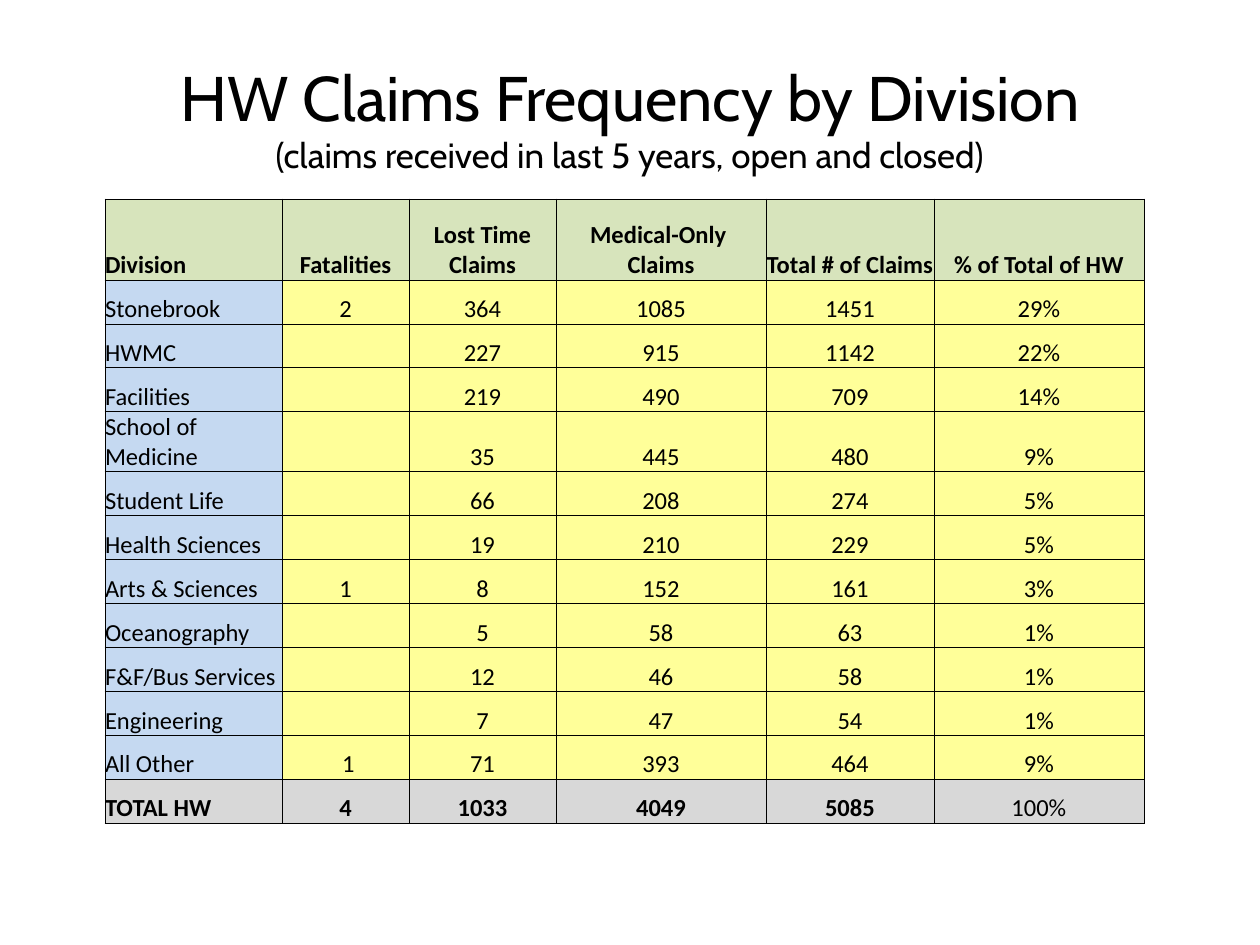
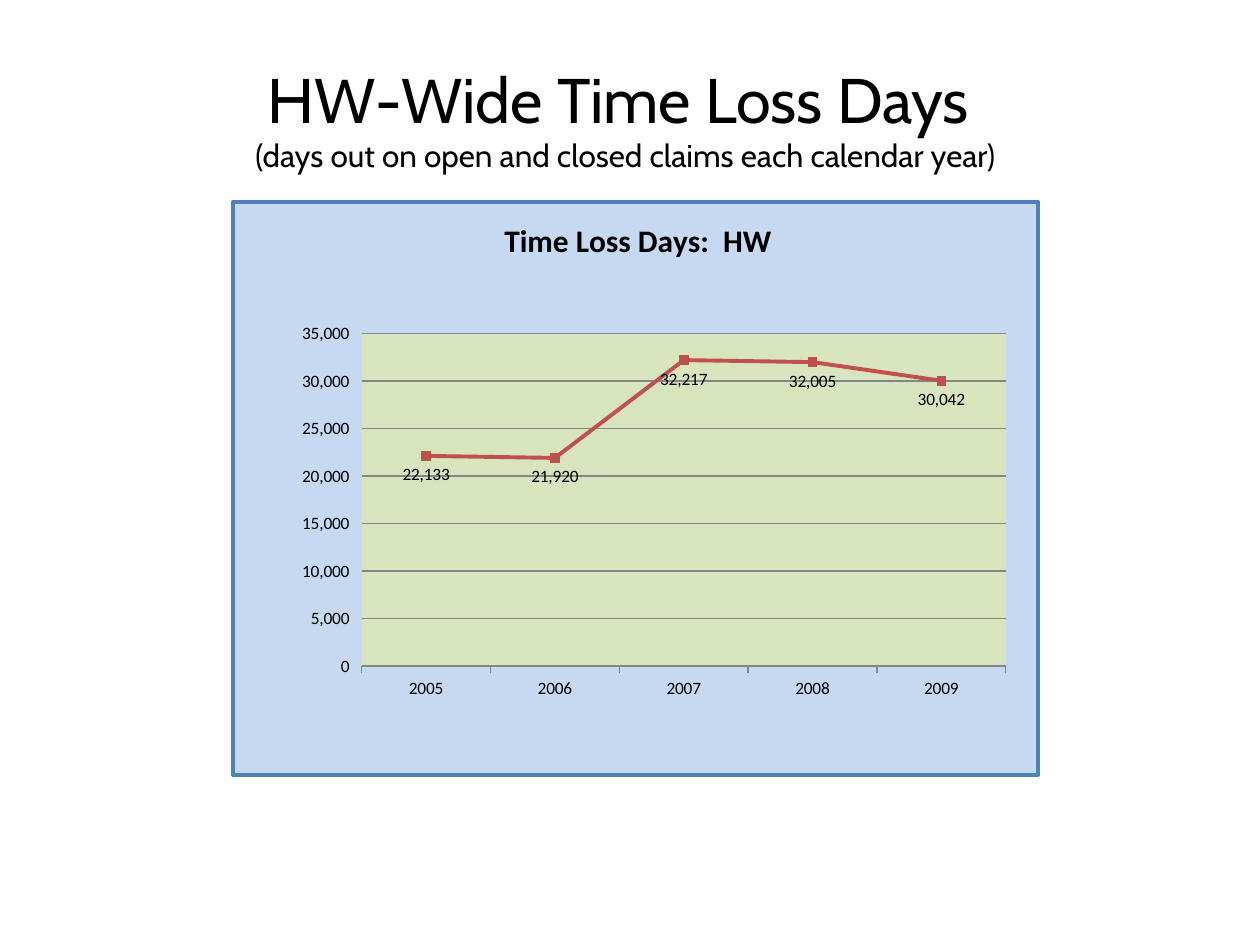
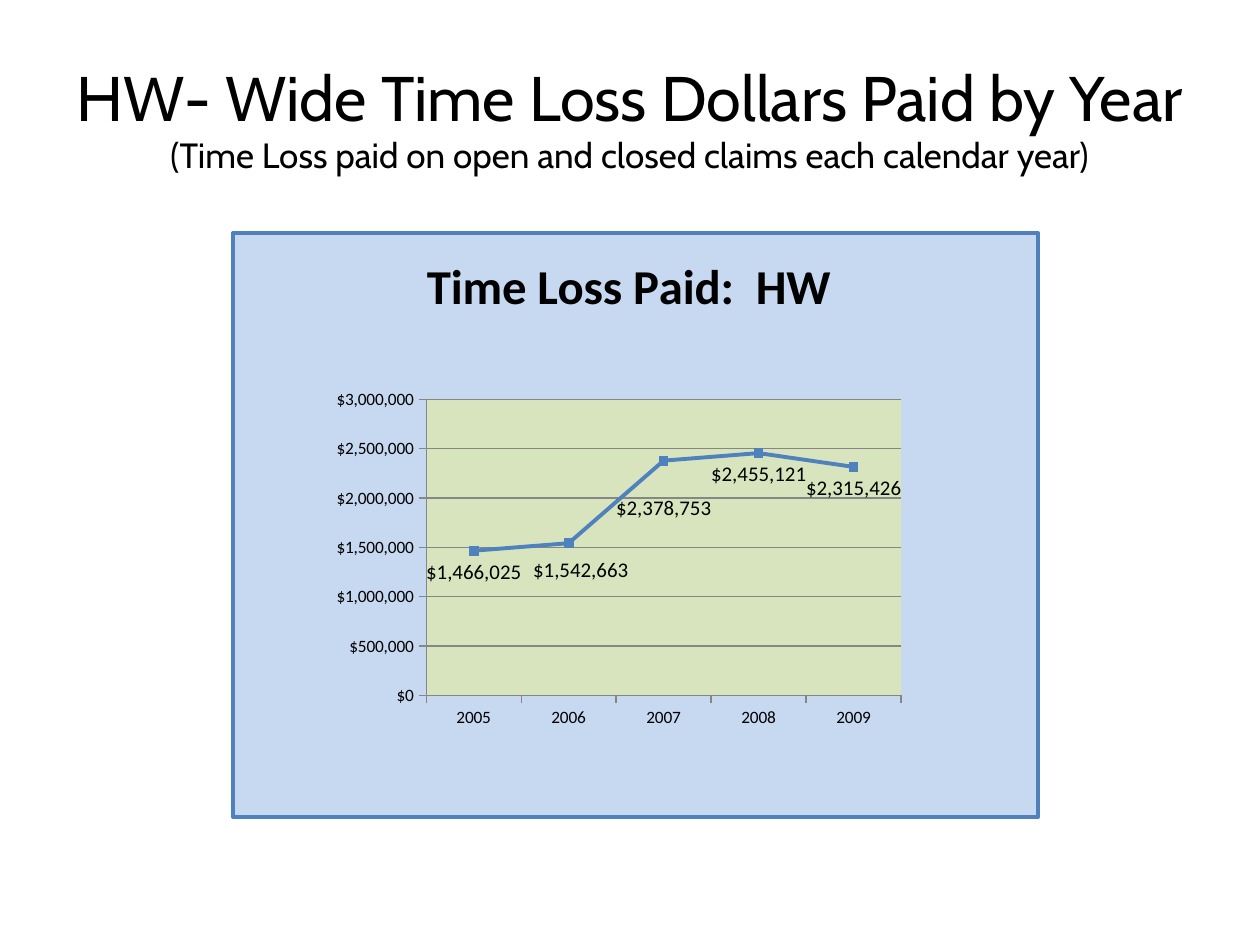
import pptx
import pptx.chart.data
import pptx.dml.color
import pptx.enum.chart
import pptx.enum.text
import pptx.oxml
import pptx.oxml.ns
import pptx.util
import lxml.etree


class Theme:
    black = "000000"
    green = "D7E4BC"
    blue = "C5D9F1"
    yellow = "FFFF99"
    grey = "D8D8D8"
    chart_fill = "C6D9F1"
    plot_fill = "D7E4BD"
    border = "4F81BD"
    axis = "868686"
    red_line = "C0504D"
    blue_line = "4F81BD"
    title_font = "Cabin"
    body_font = "Calibri"
    title_size = 36
    table_size = 14
    axis_size = 10


PX = 914400 / 126
qn = pptx.oxml.ns.qn
rgb = pptx.dml.color.RGBColor.from_string
Pt = pptx.util.Pt


def px(*lengths):
    return [pptx.util.Emu(round(length * PX)) for length in lengths]


def set_layout(parent, index, target=None, mode=None, **fractions):
    for old_layout in parent.findall(qn("c:layout")):
        parent.remove(old_layout)
    layout = lxml.etree.Element(qn("c:layout"))
    manual = lxml.etree.SubElement(layout, qn("c:manualLayout"))
    settings = {"layoutTarget": target, "xMode": mode, "yMode": mode, **fractions}
    for name, value in settings.items():
        if value is not None:
            lxml.etree.SubElement(manual, qn("c:" + name)).set("val", str(value))
    parent.insert(index, layout)


presentation = pptx.Presentation()
presentation.slide_width, presentation.slide_height = px(1260, 945)

titles = [
    ("HW Claims Frequency by Division", "(claims received in last 5 years, open and closed)", 20, 63, 1134),
    ("HW-Wide Time Loss Days ", "(days out on open and closed claims each calendar year)", 18, 32, 1187),
    ("HW- Wide Time Loss Dollars Paid by Year", "(Time Loss paid on open and closed claims each calendar year)", 20, 63, 1134),
]
slides = []
for heading, subtitle, subtitle_size, left, width in titles:
    slide = presentation.slides.add_slide(presentation.slide_layouts[6])
    slides.append(slide)
    text_frame = slide.shapes.add_textbox(*px(left, 38, width, 158)).text_frame
    text_frame.word_wrap = True
    text_frame.vertical_anchor = pptx.enum.text.MSO_ANCHOR.MIDDLE
    paragraph = text_frame.paragraphs[0]
    paragraph.alignment = pptx.enum.text.PP_ALIGN.CENTER
    for text, size in ((heading, Theme.title_size), (subtitle, subtitle_size)):
        if text == subtitle:
            paragraph.add_line_break()
        run = paragraph.add_run()
        run.text = text
        run.font.size = Pt(size)
        run.font.name = Theme.title_font
        run.font.color.rgb = rgb(Theme.black)

claims = [
    ("Division", "Fatalities", "Lost Time Claims", "Medical-Only  Claims", "Total # of Claims", "% of Total of HW"),
    ("Stonebrook", "2", "364", "1085", "1451", "29%"),
    ("HWMC", "", "227", "915", "1142", "22%"),
    ("Facilities", "", "219", "490", "709", "14%"),
    ("School of Medicine", "", "35", "445", "480", "9%"),
    ("Student Life", "", "66", "208", "274", "5%"),
    ("Health Sciences", "", "19", "210", "229", "5%"),
    ("Arts & Sciences", "1", "8", "152", "161", "3%"),
    ("Oceanography", "", "5", "58", "63", "1%"),
    ("F&F/Bus Services", "", "12", "46", "58", "1%"),
    ("Engineering", "", "7", "47", "54", "1%"),
    ("All Other", chr(160) + "1", "71", "393", "464", "9%"),
    ("TOTAL HW", "4", "1033", "4049", "5085", "100%"),
]
column_widths = [177, 127, 147, 210, 168, 210]
row_heights = [81] + [44] * 3 + [60] + [44] * 8
last_row = len(claims) - 1
table = slides[0].shapes.add_table(
    len(claims), len(column_widths), *px(105, 199, sum(column_widths), sum(row_heights))
).table
for column, width in zip(table.columns, px(*column_widths)):
    column.width = width
for row, height in zip(table.rows, px(*row_heights)):
    row.height = height
for row_index, record in enumerate(claims):
    for column_index, text in enumerate(record):
        cell = table.cell(row_index, column_index)
        cell.margin_left = cell.margin_right = cell.margin_top = cell.margin_bottom = 0
        cell.vertical_anchor = pptx.enum.text.MSO_ANCHOR.BOTTOM
        if row_index == 0:
            fill = Theme.green
        elif row_index == last_row:
            fill = Theme.grey
        else:
            fill = Theme.yellow if column_index else Theme.blue
        cell.fill.solid()
        cell.fill.fore_color.rgb = rgb(fill)
        cell.text = text
        paragraph = cell.text_frame.paragraphs[0]
        if column_index:
            paragraph.alignment = pptx.enum.text.PP_ALIGN.CENTER
        paragraph.font.size = Pt(Theme.table_size)
        paragraph.font.name = Theme.body_font
        paragraph.font.color.rgb = rgb(Theme.black)
        paragraph.font.bold = row_index in (0, last_row) and text != "100%"
        properties = cell._tc.get_or_add_tcPr()
        for position, side in enumerate(("lnL", "lnR", "lnT", "lnB")):
            properties.insert(position, pptx.oxml.parse_xml(
                f'<a:{side} {pptx.oxml.ns.nsdecls("a")} w="6350"><a:solidFill>'
                f'<a:srgbClr val="{Theme.black}"/></a:solidFill></a:{side}>'
            ))

chart_types = pptx.enum.chart.XL_CHART_TYPE
charts = [
    dict(slide=slides[1], kind=chart_types.LINE_MARKERS, box=(231, 200, 809, 577),
         title="Time Loss Days:  HW", title_size=18, title_at=dict(x=0.33, y=0.02),
         values=(22133, 21920, 32217, 32005, 30042), number_format="#,##0",
         maximum=35000, step=5000, color=Theme.red_line, label_size=10, axis_line=False,
         plot=dict(x=0.16, y=0.23, w=0.8, h=0.58), label_shifts={}),
    dict(slide=slides[2], kind=chart_types.LINE_MARKERS_STACKED, box=(231, 231, 809, 588),
         title="Time Loss Paid:  HW ", title_size=28, title_at=dict(x=0.23, y=0.02),
         values=(1466025, 1542663, 2378753, 2455121, 2315426), number_format='"$"#,##0',
         maximum=3000000, step=500000, color=Theme.blue_line, label_size=12, axis_line=True,
         plot=dict(x=0.24, y=0.285, w=0.59, h=0.507),
         label_shifts={1: dict(x=0.015, y=0.01), 2: dict(x=0, y=0.044)}),
]
for item in charts:
    chart_data = pptx.chart.data.CategoryChartData(number_format=item["number_format"])
    chart_data.categories = ["2005", "2006", "2007", "2008", "2009"]
    chart_data.add_series("Series 1", item["values"])
    chart = item["slide"].shapes.add_chart(item["kind"], *px(*item["box"]), chart_data).chart
    chart.has_legend = False
    chart.font.size = Pt(Theme.axis_size)
    chart.font.name = Theme.body_font
    chart.font.color.rgb = rgb(Theme.black)

    chart.has_title = True
    paragraph = chart.chart_title.text_frame.paragraphs[0]
    paragraph.text = item["title"]
    paragraph.font.size = Pt(item["title_size"])
    paragraph.font.bold = True
    paragraph.font.name = Theme.body_font
    paragraph.font.color.rgb = rgb(Theme.black)
    set_layout(chart.chart_title._element, 1, mode="edge", **item["title_at"])

    chart_element = chart._chartSpace.find(qn("c:chart"))
    plot_area = chart_element.find(qn("c:plotArea"))
    set_layout(plot_area, 0, target="inner", mode="edge", **item["plot"])
    chart_element.addnext(pptx.oxml.parse_xml(
        f'<c:spPr {pptx.oxml.ns.nsdecls("c", "a")}>'
        f'<a:solidFill><a:srgbClr val="{Theme.chart_fill}"/></a:solidFill>'
        f'<a:ln w="28575"><a:solidFill><a:srgbClr val="{Theme.border}"/></a:solidFill></a:ln></c:spPr>'
    ))
    plot_area.append(pptx.oxml.parse_xml(
        f'<c:spPr {pptx.oxml.ns.nsdecls("c", "a")}>'
        f'<a:solidFill><a:srgbClr val="{Theme.plot_fill}"/></a:solidFill>'
        f'<a:ln><a:noFill/></a:ln></c:spPr>'
    ))

    value_axis = chart.value_axis
    value_axis.minimum_scale = 0
    value_axis.maximum_scale = item["maximum"]
    value_axis.major_unit = item["step"]
    value_axis.tick_labels.number_format = item["number_format"]
    value_axis.tick_labels.number_format_is_linked = False
    value_axis.has_major_gridlines = True
    for line in (value_axis.major_gridlines.format.line, value_axis.format.line, chart.category_axis.format.line):
        line.color.rgb = rgb(Theme.axis)
        line.width = Pt(0.75)
    if not item["axis_line"]:
        value_axis.format.line.fill.background()

    plot = chart.plots[0]
    plot.vary_by_categories = False
    series = plot.series[0]
    series.smooth = False
    series.format.line.color.rgb = rgb(item["color"])
    series.format.line.width = Pt(2.25)
    series.marker.style = pptx.enum.chart.XL_MARKER_STYLE.SQUARE
    series.marker.size = 5
    series.marker.format.fill.solid()
    series.marker.format.fill.fore_color.rgb = rgb(item["color"])
    series.marker.format.line.color.rgb = rgb(item["color"])
    labels = series.data_labels
    labels.show_value = True
    labels.position = pptx.enum.chart.XL_LABEL_POSITION.BELOW
    labels.font.size = Pt(item["label_size"])
    for point_index, shift in item["label_shifts"].items():
        label = series.points[point_index].data_label
        label.position = pptx.enum.chart.XL_LABEL_POSITION.BELOW
        label.font.size = Pt(item["label_size"])
        set_layout(labels._element.findall(qn("c:dLbl"))[-1], 1, **shift)
    for leader_lines in labels._element.findall(qn("c:showLeaderLines")):
        labels._element.remove(leader_lines)
    lxml.etree.SubElement(labels._element, qn("c:showLeaderLines")).set("val", "0")

presentation.save("out.pptx")
